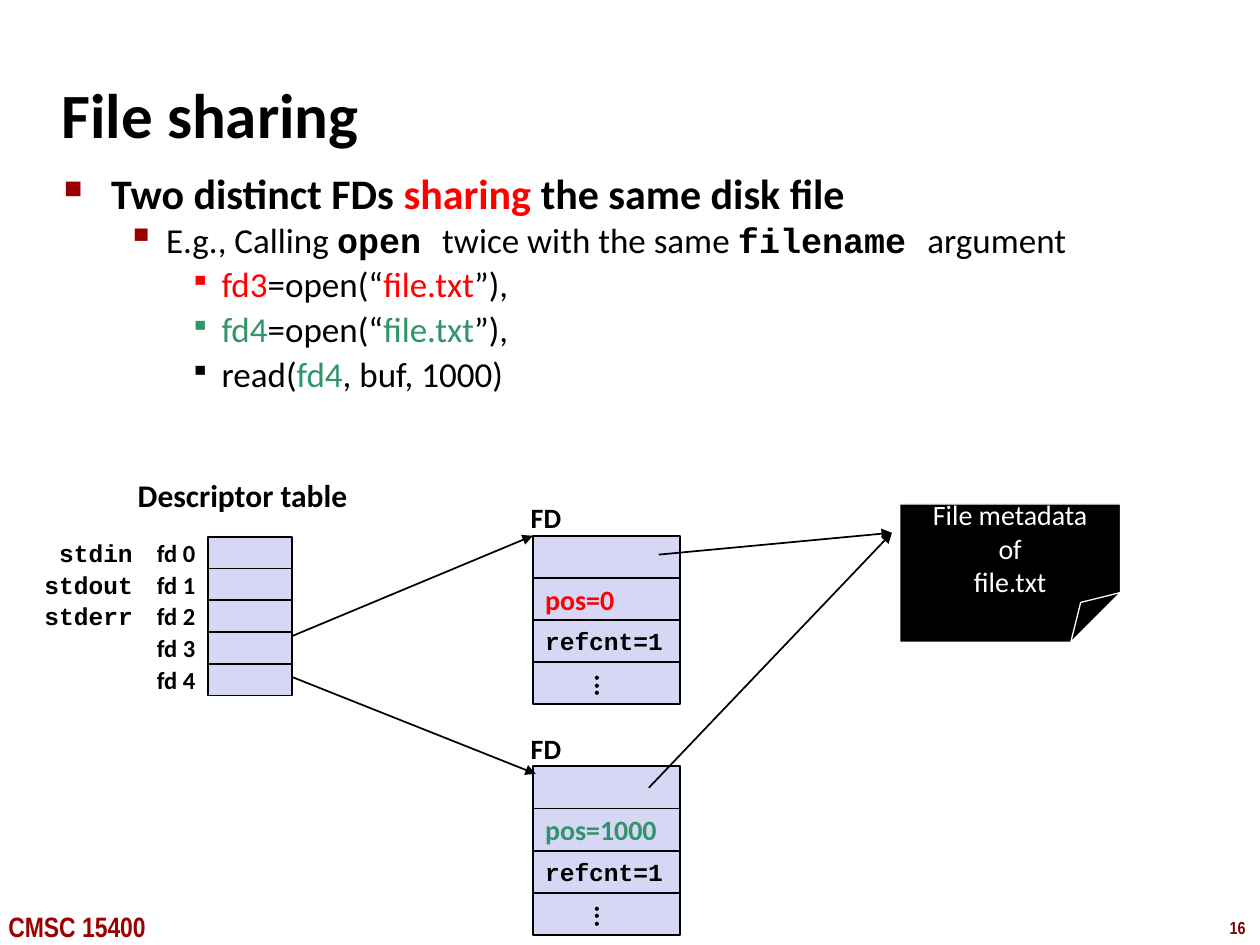
from lxml import etree
from pptx import Presentation
from pptx import util as u
from pptx.dml import color
from pptx.enum import shapes, text
from pptx.oxml import ns

THEME = {
    "sans": "Calibri", "mono": "Courier New", "narrow": "Arial Narrow",
    "black": "000000", "white": "FFFFFF", "red": "FF0000", "green": "32946A",
    "cell": "D6D6F5", "maroon": "990000", "number": "800000",
    "title": 36, "lead": 24, "body": 20, "heading": 18, "label": 16, "small": 14, "page": 10,
}

# Content: each bullet is (level, [(words, colour, font, bold)])
BULLETS = [
    (0, [("Two distinct FDs ", "black", "sans", True), ("sharing", "red", "sans", True),
         (" the same disk file", "black", "sans", True)]),
    (1, [("E.g., Calling ", "black", "sans", False), ("open ", "black", "mono", True),
         ("twice with the same ", "black", "sans", False), ("filename ", "black", "mono", True),
         ("argument", "black", "sans", False)]),
    (2, [("fd3", "red", "sans", False), ("=open(“", "black", "sans", False),
         ("file.txt", "red", "sans", False), ("”),", "black", "sans", False)]),
    (2, [("fd4", "green", "sans", False), ("=open(“", "black", "sans", False),
         ("file.txt", "green", "sans", False), ("”),", "black", "sans", False)]),
    (2, [("read(", "black", "sans", False), ("fd4", "green", "sans", False),
         (", buf, 1000)", "black", "sans", False)]),
]
# Per level: margin, hanging indent (cm), line spacing, mark, mark size %, mark colour, type size
LEVELS = [
    (0.95, 0.95, 0.85, "■", 60, "maroon", "lead"),
    (2.06, 0.79, 0.85, "▪", 110, "maroon", "body"),
    (3.18, 0.64, 0.9, "▪", 80, None, "body"),
]
STREAMS = ["stdin", "stdout", "stderr"]
DESCRIPTORS = ["fd 0", "fd 1", "fd 2", "fd 3", "fd 4"]
# File descriptions: top (cm), position, colour of the position
DESCRIPTIONS = [(10.8, "pos=0", "red"), (15.45, "pos=1000", "green")]
METADATA = ["File metadata", "of", "file.txt"]
ARROWS = [
    ((5.87, 12.83), (10.74, 10.8)),
    ((5.87, 13.64), (10.8, 15.6)),
    ((13.28, 11.18), (17.98, 10.74)),
    ((13.08, 15.88), (17.98, 10.74)),
]

TABLE_X, TABLE_Y, TABLE_W, ROW_H = 4.19, 10.82, 1.7, 0.64
FD_X, FD_W, FD_ROW_H = 10.74, 2.97, 0.85

deck = Presentation()
deck.slide_width, deck.slide_height = u.Cm(25.4), u.Cm(19.05)
page = deck.slides.add_slide(deck.slide_layouts[6])


def rgb(name):
    return color.RGBColor.from_string(THEME[name])


def style(font, size, shade="black", face="sans", bold=True):
    font.size, font.name, font.bold = u.Pt(THEME[size]), THEME[face], bold
    font.color.rgb = rgb(shade)


def write(shape, lines, size, shade="black", face="sans", bold=True, align="LEFT",
          anchor="MIDDLE", wrap=False):
    frame = shape.text_frame
    frame.text = "\n".join(lines)
    frame.word_wrap = wrap
    frame.vertical_anchor = getattr(text.MSO_ANCHOR, anchor)
    for para in frame.paragraphs:
        para.alignment = getattr(text.PP_ALIGN, align)
        for span in para.runs:
            style(span.font, size, shade, face, bold)


def label(place, words, size, **look):
    box = page.shapes.add_textbox(*map(u.Cm, place))
    write(box, [words], size, **look)


def add_shape(kind, place, fill="cell", line="black", weight=1):
    shape = page.shapes.add_shape(kind, *map(u.Cm, place))
    shape.shadow.inherit = False
    shape.fill.solid()
    shape.fill.fore_color.rgb = rgb(fill)
    shape.line.color.rgb = rgb(line)
    shape.line.width = u.Pt(weight)
    return shape


def add_bullet(para, level, first):
    margin, hang, spacing, mark, percent, shade, size = LEVELS[level]
    para.level = level
    para.line_spacing = spacing
    props = para._p.get_or_add_pPr()
    props.set("marL", str(u.Cm(margin)))
    props.set("indent", str(-u.Cm(hang)))
    if not first:
        before = etree.SubElement(props, ns.qn("a:spcBef"))
        etree.SubElement(before, ns.qn("a:spcPct"), val="20000")
    if shade:
        tint = etree.SubElement(props, ns.qn("a:buClr"))
        etree.SubElement(tint, ns.qn("a:srgbClr"), val=THEME[shade])
    etree.SubElement(props, ns.qn("a:buSzPct"), val=str(percent * 1000))
    etree.SubElement(props, ns.qn("a:buChar"), char=mark)
    return size


def add_arrow(start, end):
    arrow = page.shapes.add_connector(shapes.MSO_CONNECTOR.STRAIGHT, *map(u.Cm, start + end))
    arrow.line.color.rgb = rgb("black")
    arrow.line.width = u.Pt(1)
    props = arrow._element.spPr
    etree.SubElement(props.find(ns.qn("a:ln")), ns.qn("a:tailEnd"), type="triangle")
    etree.SubElement(props, ns.qn("a:effectLst"))


# Footer and title
label((24.54, 18.36, 0.86, 0.69), "16", "page", shade="number", face="narrow", anchor="TOP")
label((-0.08, 18.21, 3.61, 0.94), "CMSC 15400", "label", shade="maroon", face="narrow",
      anchor="TOP")
label((0.99, 1.22, 21.08, 2.11), "File sharing", "title", wrap=True)

# Bullets
body = page.shapes.add_textbox(*map(u.Cm, (1.04, 3.4, 23.09, 4.45))).text_frame
body.word_wrap = True
for index, (level, spans) in enumerate(BULLETS):
    para = body.add_paragraph() if index else body.paragraphs[0]
    size = add_bullet(para, level, index == 0)
    for words, shade, face, bold in spans:
        span = para.add_run()
        span.text = words
        style(span.font, size, shade, face, bold)

# Descriptor table
label((2.49, 9.47, 4.8, 1.02), "Descriptor table", "heading", align="CENTER")
for row, name in enumerate(DESCRIPTORS):
    top = TABLE_Y + row * ROW_H
    add_shape(shapes.MSO_SHAPE.RECTANGLE, (TABLE_X, top, TABLE_W, ROW_H))
    label((TABLE_X - TABLE_W, top, TABLE_W, ROW_H), name, "small", align="RIGHT")
    if row < len(STREAMS):
        label((0.64, top, 2.29, ROW_H), STREAMS[row], "small", face="mono", align="RIGHT")

# File descriptions
for top, position, shade in DESCRIPTIONS:
    label((10.45, top - 0.84, 1.14, 0.94), "FD", "label")
    cells = [add_shape(shapes.MSO_SHAPE.RECTANGLE, (FD_X, top + row * FD_ROW_H, FD_W, FD_ROW_H))
             for row in range(4)]
    write(cells[1], [position], "label", shade)
    write(cells[2], ["refcnt=1"], "small", face="mono")
    write(cells[3], ["..."], "label")
    cells[3].text_frame._txBody.bodyPr.set("vert", "eaVert")

# File metadata, with the size of the folded corner
note = add_shape(shapes.MSO_SHAPE.FOLDED_CORNER, (18.14, 10.16, 4.45, 2.79), "black", "white", 0.75)
guides = next(note._element.spPr.iter(ns.qn("a:avLst")))
etree.SubElement(guides, ns.qn("a:gd"), name="adj", fmla="val 36000")
write(note, METADATA, "label", "white", bold=False, align="CENTER", wrap=True)

# Arrows
for start, end in ARROWS:
    add_arrow(start, end)

deck.save("out.pptx")
